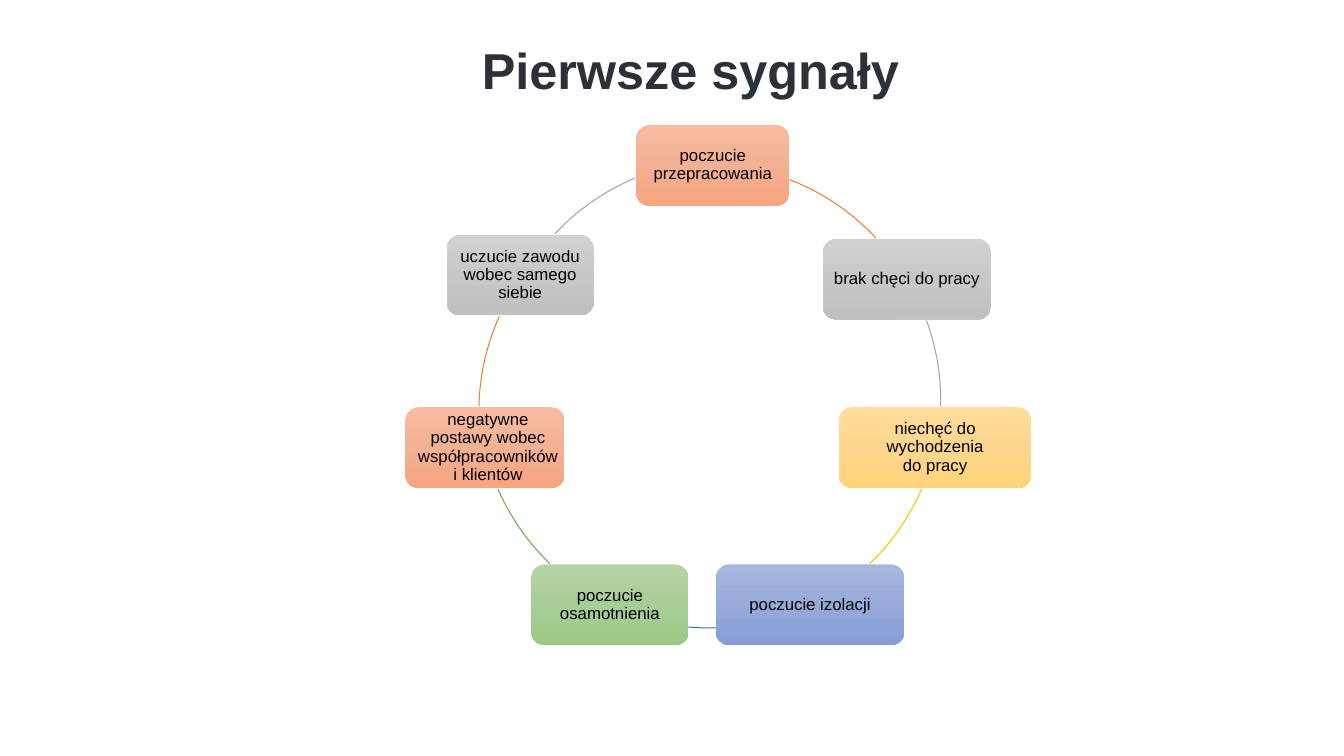
from copy import deepcopy

from pptx import Presentation
from pptx import util as u
from pptx.dml.color import RGBColor
from pptx.enum import shapes, text
from pptx.oxml.ns import qn

PX = 9144  # 100 px to the inch
RING = 458  # diameter of the circle behind the signals
BOX_HEIGHT = 80

COLORS = {
    "title": "2C3039", "label": "000000",
    "orange": "ED7D31", "grey": "A5A5A5", "gold": "FFC000",
    "blue": "4372C3", "green": "70AD47",
}
GRADIENTS = {
    "orange": ("F7BCA2", "F4B093", "F7A47F"),
    "grey": ("D1D1D1", "C7C7C7", "C0C0C0"),
    "gold": ("FFDC9B", "FFD68D", "FFD478"),
    "blue": ("A6B6DE", "97AAD8", "859CD6"),
    "green": ("B4D4A5", "A8CD97", "9BC985"),
}

# label, left, top, width, right inset, colour
SIGNALS = [
    ("poczucie przepracowania", 631, 124, 152, 6, "orange"),
    ("brak chęci do pracy", 816, 237, 167, 6, "grey"),
    ("niechęć do wychodzenia\vdo pracy", 832, 404, 191, 6, "gold"),
    ("poczucie izolacji", 710, 560, 187, 6, "blue"),
    ("poczucie osamotnienia", 527, 560, 156, 6, "green"),
    ("negatywne postawy wobec współpracowników i klientów",
     402, 404, 158, 0, "orange"),
    ("uczucie zawodu wobec samego siebie", 443, 233, 146, 6, "grey"),
]

# left and top of the circle, start and end in degrees clockwise, colour
ARCS = [
    (472, 163, 291, 317.1, "orange"),
    (475, 168, 339.8, 1.5, "grey"),
    (475, 165, 23.4, 46.2, "gold"),
    (475, 165, 88.5, 95.3, "blue"),
    (475, 165, 133.8, 156.6, "green"),
    (475, 179, 181.2, 204.3, "orange"),
    (489, 159, 222.9, 247.4, "grey"),
]


def px(*lengths):
    return [u.Emu(length * PX) for length in lengths]


def rgb(name):
    return RGBColor.from_string(COLORS[name])


def write(shape, words, insets, color, spacing=1.0, **font_format):
    frame = shape.text_frame
    frame_format = dict(zip(
        ("margin_left", "margin_top", "margin_right", "margin_bottom"),
        px(*insets)))
    frame_format.update(word_wrap=True, vertical_anchor=text.MSO_ANCHOR.MIDDLE)
    for key, value in frame_format.items():
        setattr(frame, key, value)
    frame.text = words
    paragraph = frame.paragraphs[0]
    paragraph.alignment = text.PP_ALIGN.CENTER
    paragraph.line_spacing = spacing
    for run in paragraph.runs:
        run.font.color.rgb = rgb(color)
        for key, value in {"name": "Arial", **font_format}.items():
            setattr(run.font, key, value)


def fill_gradient(shape, hexes):
    shape.fill.gradient()
    shape.fill.gradient_angle = 270
    # The default gradient has two stops; add a middle one
    first = shape._element.spPr.find(".//" + qn("a:gs"))
    first.addnext(deepcopy(first))
    for stop, position, color in zip(
            shape.fill.gradient_stops, (0, 0.5, 1), hexes):
        stop.position = position
        stop.color.rgb = RGBColor.from_string(color)


def add_title(slide, words):
    title = slide.shapes.add_textbox(*px(387, 27, 654, 83))
    write(title, words, (10, 5, 68, 5), "title", size=u.Pt(36), bold=True)


def add_signal(slide, label, left, top, width, right_inset, color):
    signal = slide.shapes.add_shape(
        shapes.MSO_SHAPE.ROUNDED_RECTANGLE, *px(left, top, width, BOX_HEIGHT))
    signal.shadow.inherit = False
    signal.line.fill.background()
    fill_gradient(signal, GRADIENTS[color])
    write(signal, label, (6, 6, right_inset, 6), "label", 0.9, size=u.Pt(12))


def add_arc(slide, left, top, start, end, color):
    arc = slide.shapes.add_shape(
        shapes.MSO_SHAPE.ARC, *px(left, top, RING, RING))
    arc.shadow.inherit = False
    arc.fill.background()
    arc.line.color.rgb = rgb(color)
    arc.line.width = u.Pt(0.75)
    # One degree is 60000 units, an adjustment of 1 is 100000
    for index, degrees in enumerate((start, end)):
        arc.adjustments[index] = degrees * 0.6


def main():
    deck = Presentation()
    deck.slide_width, deck.slide_height = px(1333, 750)
    slide = deck.slides.add_slide(deck.slide_layouts[6])

    add_title(slide, "Pierwsze sygnały")

    # Ring of signals, each followed by the arc to the next
    for signal, arc in zip(SIGNALS, ARCS):
        add_signal(slide, *signal)
        add_arc(slide, *arc)

    deck.save("out.pptx")


if __name__ == "__main__":
    main()
